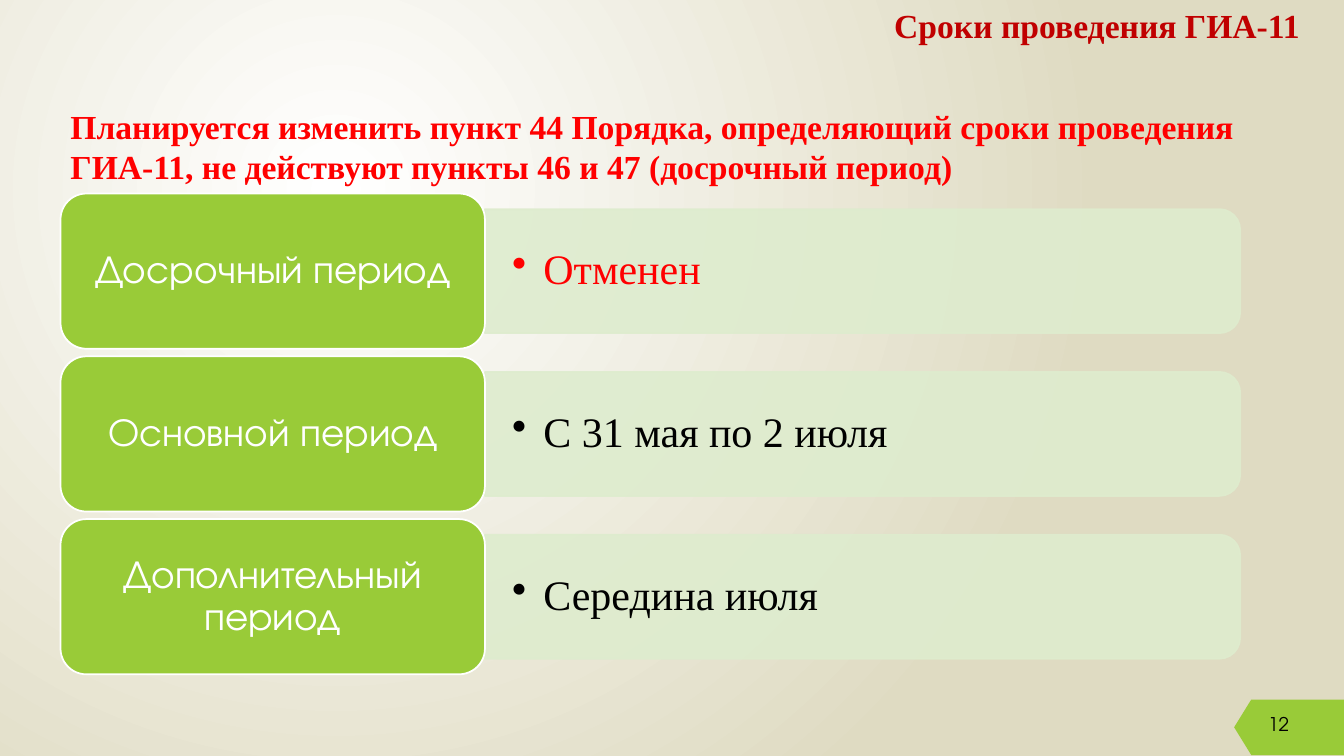
import lxml.etree
import pptx
import pptx.dml.color
import pptx.enum.shapes
import pptx.enum.text
import pptx.oxml
import pptx.oxml.ns
import pptx.util

Inches = pptx.util.Inches
Pt = pptx.util.Pt
MSO_SHAPE = pptx.enum.shapes.MSO_SHAPE
PP_ALIGN = pptx.enum.text.PP_ALIGN
MSO_ANCHOR = pptx.enum.text.MSO_ANCHOR
qn = pptx.oxml.ns.qn

COLORS = {"green": "99CB38", "pale": "DEECCE", "white": "FFFFFF", "sand": "DFDBC2",
          "dark_red": "C00000", "red": "FF0000", "black": "000000"}
SERIF = "Times New Roman"
SANS = "TeX Gyre Adventor"
PERIODS = [("Досрочный период", "Отменен", "red"),
           ("Основной период", "С 31 мая по 2 июля", "black"),
           ("Дополнительный период", "Середина июля", "black")]


def rgb(name):
    """Return the named colour."""
    return pptx.dml.color.RGBColor.from_string(COLORS[name])


def write(shape, text, font, size, color, bold=False, align=PP_ALIGN.LEFT,
          anchor=MSO_ANCHOR.TOP, insets=(0.1, 0.05)):
    """Fill a shape with one formatted paragraph and return that paragraph."""
    frame = shape.text_frame
    frame.text = text
    frame.word_wrap = True
    frame.vertical_anchor = anchor
    frame.margin_left = frame.margin_right = Inches(insets[0])
    frame.margin_top = frame.margin_bottom = Inches(insets[1])
    para = frame.paragraphs[0]
    para.alignment = align
    span = para.runs[0]
    span.font.name = font
    span.font.size = Pt(size)
    span.font.bold = bold
    span.font.color.rgb = rgb(color)
    return para


def add_textbox(page, left, top, width, height):
    """Add an empty text box measured in inches."""
    return page.shapes.add_textbox(Inches(left), Inches(top), Inches(width), Inches(height))


def add_panel(page, kind, left, top, width, height, fill, line, opacity=100):
    """Add a filled, outlined shape measured in inches."""
    panel = page.shapes.add_shape(kind, Inches(left), Inches(top), Inches(width), Inches(height))
    panel.shadow.inherit = False
    panel.fill.solid()
    panel.fill.fore_color.rgb = rgb(fill)
    panel.line.color.rgb = rgb(line)
    panel.line.width = Pt(1.25)
    if opacity < 100:
        for color in panel._element.spPr.iter(qn("a:srgbClr")):
            lxml.etree.SubElement(color, qn("a:alpha"), val=str(opacity * 1000))
    return panel


def paint_background(page):
    """Give the page a radial gradient from white to sand."""
    page.background.fill.gradient()
    gradient = page._element.cSld.find(".//" + qn("a:gradFill"))
    namespace = pptx.oxml.ns.nsdecls("a")
    radial = pptx.oxml.parse_xml(
        f'<a:gradFill {namespace} rotWithShape="1"><a:gsLst>'
        f'<a:gs pos="0"><a:srgbClr val="{COLORS["white"]}"/></a:gs>'
        f'<a:gs pos="100000"><a:srgbClr val="{COLORS["sand"]}"/></a:gs></a:gsLst>'
        '<a:path path="circle"><a:fillToRect l="50000" t="50000" r="100000" b="100000"/>'
        '</a:path></a:gradFill>')
    gradient.getparent().replace(gradient, radial)


def add_page_number(page, left, top, width, height, number):
    """Draw the page number on an arrow-shaped tag."""
    right, bottom, shoulder = left + width, top + height, left + 0.17
    builder = page.shapes.build_freeform(Inches(left), Inches(top + height / 2), scale=1.0)
    corners = [(shoulder, top), (right, top), (right, bottom), (shoulder, bottom)]
    builder.add_line_segments([(Inches(x), Inches(y)) for x, y in corners], close=True)
    tag = builder.convert_to_shape()
    tag.shadow.inherit = False
    tag.fill.solid()
    tag.fill.fore_color.rgb = rgb("green")
    tag.line.fill.background()
    box = add_textbox(page, left + 0.24, top + 0.08, width - 0.24, 0.4)
    write(box, number, SANS, 13.5, "black")


def add_heading(page, left, top, width, height):
    """Place the title in the given box."""
    title = page.shapes.title
    title.left, title.top = Inches(left), Inches(top)
    title.width, title.height = Inches(width), Inches(height)
    write(title, "Сроки проведения ГИА-11", SERIF, 24, "dark_red", True, PP_ALIGN.CENTER)


def add_period(page, left, top, width, height, period):
    """Draw one period: a label with a bulleted bar on its right."""
    name, dates, color = period
    label_width, bar_height = 4.21, 1.23
    bar_left, bar_width = left + label_width, width - label_width
    middle = top + height / 2
    bar = add_panel(page, MSO_SHAPE.ROUND_2_SAME_RECTANGLE,
                    bar_left + (bar_width - bar_height) / 2, middle - bar_width / 2,
                    bar_height, bar_width, "pale", "pale", 90)
    bar.rotation = 90

    box = add_textbox(page, bar_left, middle - 0.555, bar_width - 0.06, 1.11)
    para = write(box, dates, SERIF, 30, color, anchor=MSO_ANCHOR.MIDDLE, insets=(0.27, 0.14))
    para.level = 1
    para.line_spacing = 0.9
    properties = para._p.get_or_add_pPr()
    properties.set("marL", str(Inches(0.31)))
    properties.set("indent", str(-Inches(0.31)))
    lxml.etree.SubElement(properties, qn("a:buChar"), char="•")

    label = add_panel(page, MSO_SHAPE.ROUNDED_RECTANGLE, left, top, label_width, height,
                      "green", "white")
    para = write(label, name, SANS, 28, "white", align=PP_ALIGN.CENTER,
                 anchor=MSO_ANCHOR.MIDDLE, insets=(0.12, 0.06))
    para.line_spacing = 0.9


def add_schedule(page, left, top, width, height):
    """Spread the periods evenly over the given box."""
    row_height = 1.54
    pitch = (height - row_height) / (len(PERIODS) - 1)
    for index, period in enumerate(PERIODS):
        add_period(page, left, top + index * pitch, width, row_height, period)


def main():
    """Build the slide and save it."""
    deck = pptx.Presentation()
    deck.slide_width, deck.slide_height = Inches(13.33), Inches(7.5)
    page = deck.slides.add_slide(deck.slide_layouts[5])
    paint_background(page)
    add_page_number(page, 12.24, 6.94, 1.09, 0.55, "12")
    add_heading(page, 8.43, 0, 4.9, 0.66)
    write(add_textbox(page, 0.6, 1, 12.31, 0.91),
          "Планируется изменить пункт 44 Порядка, определяющий сроки проведения ГИА-11, "
          "не действуют пункты 46 и 47 (досрочный период)", SERIF, 24, "red", True)
    add_schedule(page, 0.6, 1.92, 11.7, 4.77)
    deck.save("out.pptx")


if __name__ == "__main__":
    main()
